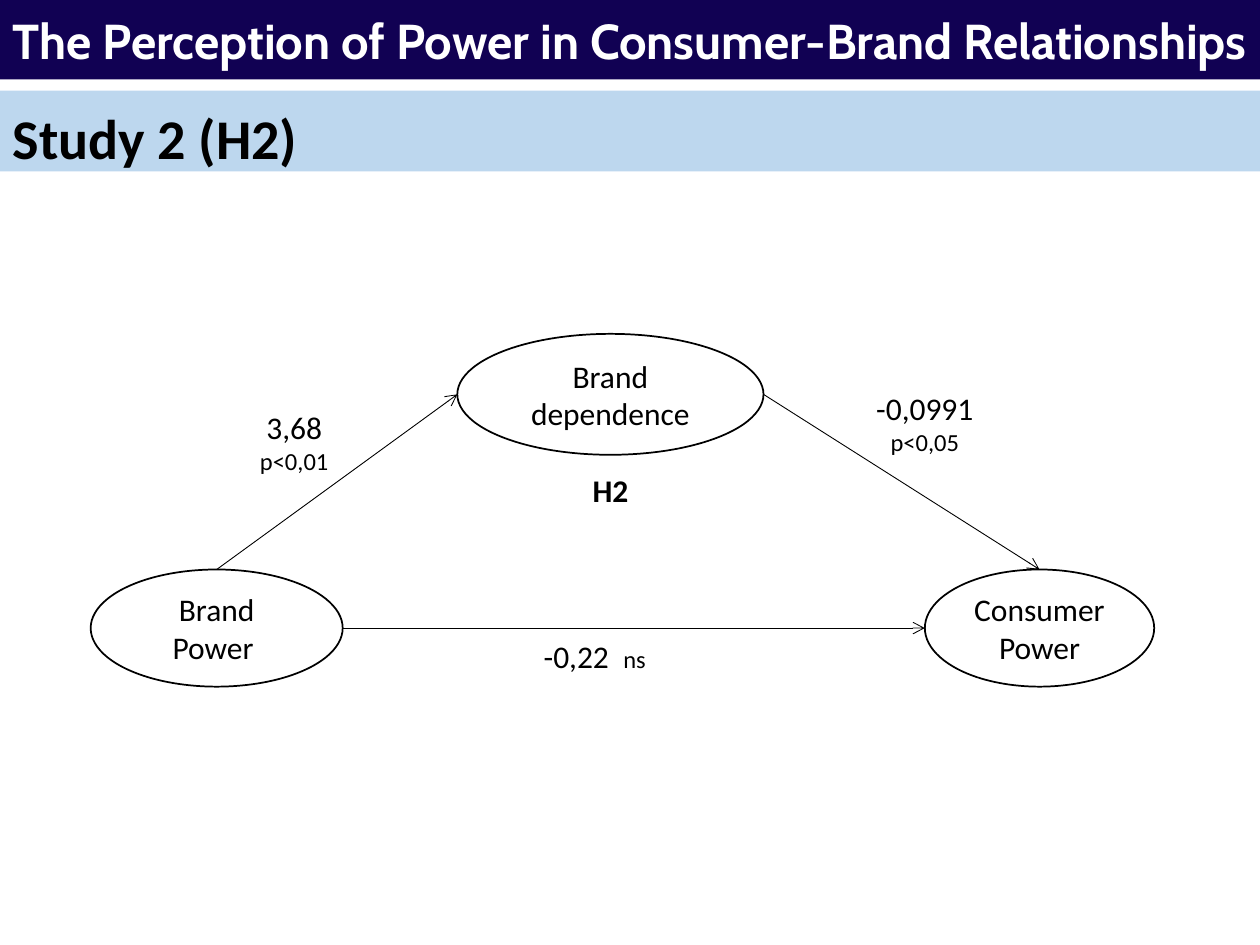
"""Build the Study 2 (H2) mediation diagram slide."""
from lxml.etree import SubElement
from pptx import Presentation
from pptx.dml.color import RGBColor
from pptx.enum.shapes import MSO_CONNECTOR, MSO_SHAPE
from pptx.enum.text import MSO_ANCHOR as ANCHOR, MSO_AUTO_SIZE as AUTO, PP_ALIGN as ALIGN
from pptx.oxml.ns import qn
from pptx.util import Inches, Pt

BLACK = RGBColor(0x00, 0x00, 0x00)
WHITE = RGBColor(0xFF, 0xFF, 0xFF)
NAVY = RGBColor(0x11, 0x01, 0x53)
PALE_BLUE = RGBColor(0xBD, 0xD7, 0xEE)

NORMAL = {"name": "Calibri", "size": Pt(18), "bold": False}
SMALL = {**NORMAL, "size": Pt(14)}
BOLD = {**NORMAL, "bold": True}
TITLE = {"name": "Cabin", "size": Pt(28), "bold": True}
HEADING = {**BOLD, "size": Pt(32)}


def write(sp, paragraphs, align=ALIGN.CENTER, color=BLACK, **frame):
    tf = sp.text_frame
    for key, value in {"word_wrap": True, "auto_size": AUTO.NONE, **frame}.items():
        setattr(tf, key, value)
    for i, runs in enumerate(paragraphs):
        p = tf.add_paragraph() if i else tf.paragraphs[0]
        p.alignment = align
        for text, font in runs:
            r = p.add_run()
            r.text = text
            r.font.color.rgb = color
            for key, value in font.items():
                setattr(r.font, key, value)


prs = Presentation()
prs.slide_width, prs.slide_height = Inches(10), Inches(7.5)
s = prs.slides.add_slide(prs.slide_layouts[1])
title, heading = s.placeholders

for sp, top, height, color in [(title, 0, 0.63, NAVY), (heading, 0.72, 0.64, PALE_BLUE)]:
    sp.left, sp.top, sp.width, sp.height = Inches(0), Inches(top), Inches(10), Inches(height)
    sp.fill.solid()
    sp.fill.fore_color.rgb = color

write(title, [[("The Perception of Power in Consumer-Brand Relationships", TITLE)]],
      ALIGN.LEFT, WHITE, vertical_anchor=ANCHOR.MIDDLE)
write(heading, [[("Study 2 (H2)", HEADING)]], ALIGN.JUSTIFY, vertical_anchor=ANCHOR.TOP)
p = heading.text_frame.paragraphs[0]
p.line_spacing = 1.1
p.space_before = Pt(0)
pPr = p._p.get_or_add_pPr()
pPr.set("marL", "0")
pPr.set("indent", "0")
SubElement(pPr, qn("a:buNone"))

nodes = []
for lines, box in [
    (["Brand Power "], (0.72, 4.52, 2, 0.93)),
    (["Consumer", "Power"], (7.34, 4.52, 1.82, 0.93)),
    (["Brand dependence"], (3.63, 2.65, 2.43, 0.96)),
]:
    sp = s.shapes.add_shape(MSO_SHAPE.OVAL, *map(Inches, box))
    sp.shadow.inherit = False
    sp.fill.background()
    sp.line.color.rgb = BLACK
    sp.line.width = Pt(1)
    write(sp, [[(line, NORMAL)] for line in lines], vertical_anchor=ANCHOR.MIDDLE)
    x, y, w, h = box
    nodes.append({"left": (x, y + h / 2), "right": (x + w, y + h / 2), "top": (x + w / 2, y)})

power, consumer, dependence = nodes
for start, end in [
    (power["right"], consumer["left"]),
    (power["top"], dependence["left"]),
    (dependence["right"], consumer["top"]),
]:
    arrow = s.shapes.add_connector(MSO_CONNECTOR.STRAIGHT, *map(Inches, start + end))
    arrow.line.color.rgb = BLACK
    arrow.line.width = Pt(0.5)
    SubElement(arrow.line._get_or_add_ln(), qn("a:tailEnd"), type="arrow")
    SubElement(arrow._element.spPr, qn("a:effectLst"))

for box, paragraphs, wrap in [
    ((4.35, 3.69, 0.99, 0.4), [[("H2", BOLD)]], True),
    ((1.96, 3.19, 0.75, 0.64), [[("3,68", NORMAL)], [("p<0,01", SMALL)]], False),
    ((6.85, 3.04, 0.98, 0.64), [[("-0,0991", NORMAL)], [("p<0,05", SMALL)]], False),
    ((4.21, 5.01, 1.02, 0.4), [[("-0,22  ", NORMAL), ("ns", SMALL)]], False),
]:
    label = s.shapes.add_textbox(*map(Inches, box))
    write(label, paragraphs, word_wrap=wrap, auto_size=AUTO.SHAPE_TO_FIT_TEXT)

prs.save("out.pptx")
